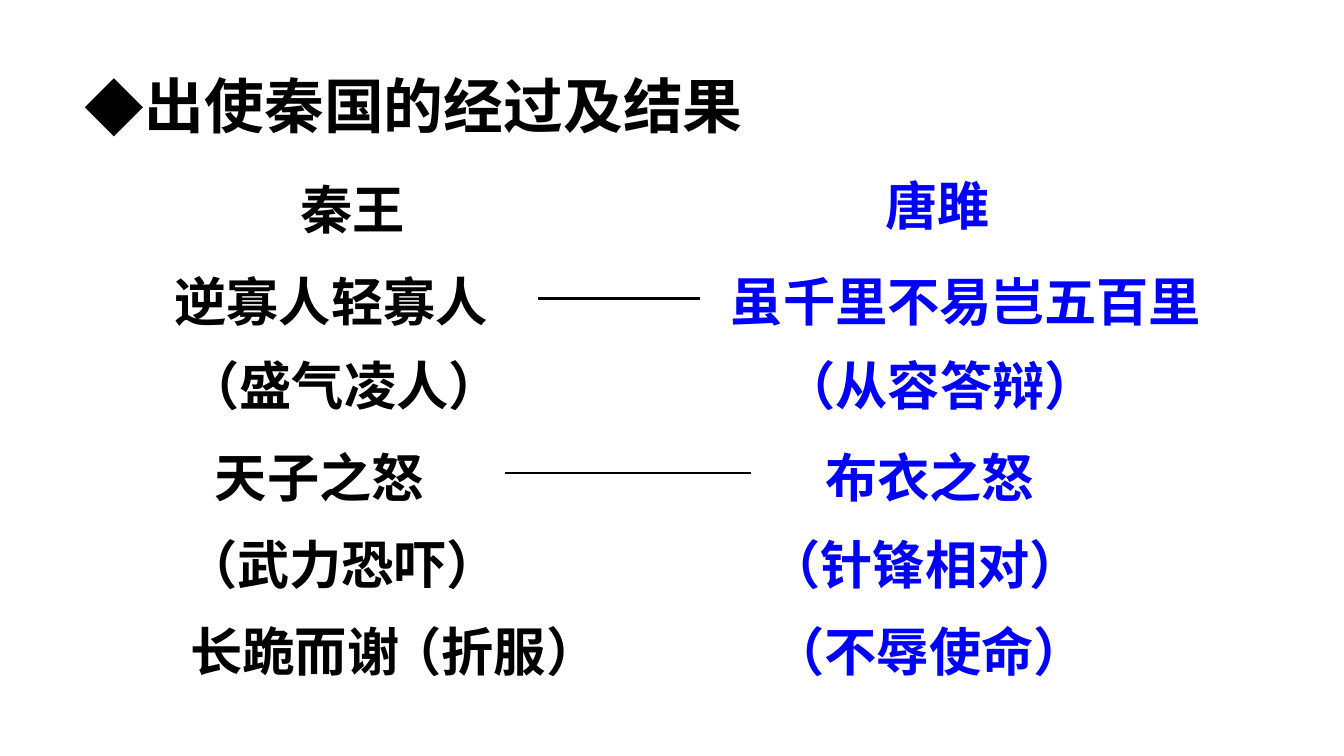
from typing import NamedTuple

from lxml import etree
from pptx import Presentation, util as u
from pptx.dml.color import RGBColor
from pptx.enum import shapes, text
from pptx.oxml.ns import qn

FONT = "Noto Sans CJK SC"
INK = {"black": "000000", "blue": "0000FF"}
ROWS = [140.4, 185.8, 234.7, 281.5, 328.3]  # tops of the dialogue rows
HIGH = 41


class Label(NamedTuple):
    words: str
    left: float
    top: float
    width: float
    ink: str = "black"
    mid: bool = False
    size: float = 28
    high: float = HIGH
    wrap: bool = True


class Rule(NamedTuple):
    left: float
    right: float
    top: float


TITLE = Label("出使秦国的经过及结果", 38.2, 33.1, 367.2, size=32, high=46, wrap=False)

LABELS = [
    # Speakers
    Label("秦王", 144, 91.4, 90, mid=True),
    Label("唐雎", 466.6, 89.3, 71.3, "blue", mid=True, wrap=False),
    # King of Qin
    Label("逆寡人轻寡人", 86.4, ROWS[0], 246.2),
    Label("（盛气凌人）", 86.4, ROWS[1], 195.8, mid=True),
    Label("天子之怒", 108, ROWS[2], 174.2),
    Label("（武力恐吓）", 87.1, ROWS[3], 192.2, mid=True),
    Label("长跪而谢", 95, ROWS[4], 159.8),
    Label("（折服）", 201.6, ROWS[4], 164.2),
    # Tang Ju
    Label("虽千里不易岂五百里", 384.5, ROWS[0], 280.1, "blue"),
    Label("（从容答辩）", 412.6, ROWS[1], 195.1, "blue"),
    Label("布衣之怒", 434.9, ROWS[2], 159.1, "blue"),
    Label("（针锋相对）", 404.6, ROWS[3], 195.1, "blue"),
    Label("（不辱使命）", 406.8, ROWS[4], 215.3, "blue"),
]

RULES = [Rule(288, 375.1, 159.8), Rule(270.7, 402.5, 253.4)]


def add_label(slide, item: Label):
    """Draw one line of bold text and return its paragraph."""
    box = slide.shapes.add_textbox(
        u.Pt(item.left), u.Pt(item.top), u.Pt(item.width), u.Pt(item.high))
    frame = box.text_frame
    frame.word_wrap = item.wrap
    frame.margin_top = frame.margin_bottom = 0
    frame.vertical_anchor = text.MSO_ANCHOR.MIDDLE
    para = frame.paragraphs[0]
    para.text = item.words
    para.alignment = text.PP_ALIGN.CENTER if item.mid else text.PP_ALIGN.LEFT
    font = para.font
    font.name, font.size, font.bold = FONT, u.Pt(item.size), True
    font.color.rgb = RGBColor.from_string(INK[item.ink])
    # East Asian letters need their own font entry
    base = para._p.pPr.find(qn("a:defRPr"))
    etree.SubElement(base, qn("a:ea"), typeface=FONT)
    return para


def add_bullet(para, mark: str, indent: float) -> None:
    """Give a paragraph a hanging bullet."""
    para.space_before = u.Pt(12)
    props = para._p.pPr
    props.set("marL", str(u.Pt(indent)))
    props.set("indent", str(-u.Pt(indent)))
    base = props.find(qn("a:defRPr"))
    for tag, key, value in (("a:buFont", "typeface", FONT),
                            ("a:buChar", "char", mark)):
        node = etree.Element(qn(tag))
        node.set(key, value)
        base.addprevious(node)


def add_rule(slide, item: Rule) -> None:
    """Draw a level line between two facing phrases."""
    line = slide.shapes.add_connector(
        shapes.MSO_CONNECTOR.STRAIGHT,
        u.Pt(item.left), u.Pt(item.top), u.Pt(item.right), u.Pt(item.top))
    line.line.width = u.Pt(1.5)
    line.line.color.rgb = RGBColor.from_string(INK["black"])
    etree.SubElement(line._element.spPr, qn("a:effectLst"))


def main() -> None:
    deck = Presentation()
    deck.slide_width, deck.slide_height = u.Pt(720), u.Pt(405)
    slide = deck.slides.add_slide(deck.slide_layouts[6])

    # Heading
    add_bullet(add_label(slide, TITLE), "◆", 32.4)

    # Two columns of phrases
    for item in LABELS:
        add_label(slide, item)

    # Lines that pair the phrases
    for item in RULES:
        add_rule(slide, item)

    deck.save("out.pptx")


if __name__ == "__main__":
    main()
